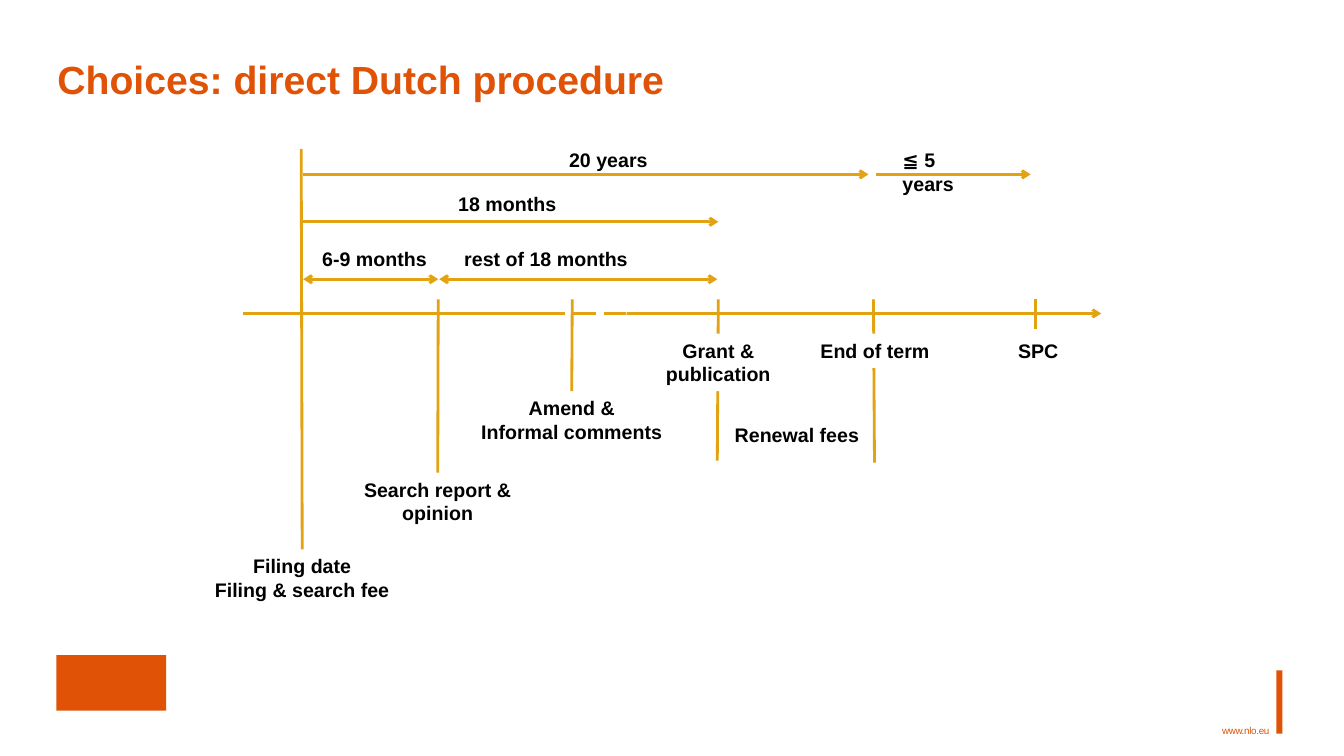
from dataclasses import dataclass

from lxml.etree import SubElement
from pptx import Presentation
from pptx.dml.color import RGBColor
from pptx.enum.dml import MSO_LINE
from pptx.enum.shapes import MSO_CONNECTOR, MSO_SHAPE
from pptx.enum.text import MSO_ANCHOR, PP_ALIGN
from pptx.oxml.ns import qn
from pptx.util import Inches, Pt


@dataclass(frozen=True)
class Theme:
    """Colours and type sizes of the slide."""
    brand: RGBColor = RGBColor(0xE0, 0x52, 0x06)
    line: RGBColor = RGBColor(0xE3, 0xA2, 0x12)
    text: RGBColor = RGBColor(0, 0, 0)
    paper: RGBColor = RGBColor(0xFF, 0xFF, 0xFF)
    font: str = "Arial"
    title_size: int = 28
    label_size: int = 14
    footer_size: int = 7
    line_width: int = 2


THEME = Theme()
AXIS_Y = 3.11
TICK_TOP = 2.97
TERM_Y = 1.73
PERIOD_Y = 2.77
FILING_X, SEARCH_X, AMEND_X, GRANT_X, END_X, SPC_X = 3, 4.35, 5.68, 7.13, 8.67, 10.28

ARROWS = [
    (3.01, 8.62, TERM_Y, False),
    (8.7, 10.23, TERM_Y, False),
    (2.99, GRANT_X, 2.2, False),
    (3.01, SEARCH_X, PERIOD_Y, True),
    (4.36, 7.12, PERIOD_Y, True),
]
TICKS = [(GRANT_X, 7.12, 4.57), (END_X, 8.68, 4.59), (SPC_X, SPC_X, 3.26)]
PERIODS = [
    ("6-9 months", 3.1, 2.4, 1.25),
    ("rest of 18 months", 4.51, 2.4, 1.84),
    ("18 months", 4.45, 1.85, 1.18),
    ("20 years", 5.55, 1.42, 0.99),
]
EVENTS = [
    (["Grant &", "publication"], 6.51, 3.31, 1.24),
    (["End of term"], 8.04, 3.31, 1.29),
    (["SPC"], 10, 3.31, 0.61),
    (["Renewal fees"], 7.19, 4.15, 1.44),
]
JOINED_EVENTS = [
    (["Filing date", "Filing & search fee"], 2.03, 5.45, 1.94, 2.99, 1.48),
    (["Search report &", "opinion"], 3.51, 4.69, 1.67, SEARCH_X, TICK_TOP),
    (["Amend &", "Informal comments"], 4.67, 3.88, 2.01, AMEND_X, TICK_TOP),
]


def add_run(paragraph, text, size, color, bold=True):
    """Add one formatted run and return it."""
    run = paragraph.add_run()
    run.text = text
    run.font.name = THEME.font
    run.font.size = Pt(size)
    run.font.bold = bold
    run.font.color.rgb = color
    return run


def add_block(slide, left, top, width, height, color):
    """Add a plain filled rectangle."""
    block = slide.shapes.add_shape(MSO_SHAPE.RECTANGLE, Inches(left), Inches(top),
                                   Inches(width), Inches(height))
    block.shadow.inherit = False
    block.fill.solid()
    block.fill.fore_color.rgb = color
    block.line.fill.background()


def add_label(slide, lines, left, top, width, wrap=False):
    """Add a bold label with one paragraph per line."""
    height = 0.34 if len(lines) == 1 else 0.57
    label = slide.shapes.add_textbox(Inches(left), Inches(top), Inches(width), Inches(height))
    frame = label.text_frame
    frame.word_wrap = wrap
    for index, line in enumerate(lines):
        paragraph = frame.add_paragraph() if index else frame.paragraphs[0]
        add_run(paragraph, line, THEME.label_size, THEME.text)
    return label


def add_event(slide, lines, left, top, width):
    """Add a centred label on a paper-coloured ground."""
    label = add_label(slide, lines, left, top, width)
    label.fill.solid()
    label.fill.fore_color.rgb = THEME.paper
    for paragraph in label.text_frame.paragraphs:
        paragraph.alignment = PP_ALIGN.CENTER
    return label


def add_line(slide, start, end, arrowheads=()):
    """Add a straight line with arrowheads at the named ends."""
    points = [Inches(value) for value in (*start, *end)]
    connector = slide.shapes.add_connector(MSO_CONNECTOR.STRAIGHT, *points)
    connector.line.color.rgb = THEME.line
    connector.line.width = Pt(THEME.line_width)
    outline = connector.line._get_or_add_ln()
    for name in arrowheads:
        SubElement(outline, qn(f"a:{name}"), type="arrow")
    SubElement(connector._element.spPr, qn("a:effectLst"))
    return connector


def add_title(slide, text):
    """Place and fill the title placeholder."""
    title = slide.shapes.title
    title.left, title.top, title.width, title.height = map(Inches, (0.57, 0.52, 12.2, 0.58))
    frame = title.text_frame
    frame.margin_left = frame.margin_right = frame.margin_top = frame.margin_bottom = 0
    frame.vertical_anchor = MSO_ANCHOR.MIDDLE
    paragraph = frame.paragraphs[0]
    paragraph.alignment = PP_ALIGN.LEFT
    paragraph.line_spacing = 0.9
    add_run(paragraph, text, THEME.title_size, THEME.brand)


def add_footer(slide):
    """Add the web address and the accent bar."""
    footer = slide.shapes.add_textbox(Inches(12.13), Inches(7.2), Inches(0.53), Inches(0.17))
    frame = footer.text_frame
    frame.margin_left = frame.margin_right = frame.margin_top = frame.margin_bottom = 0
    frame.word_wrap = False
    paragraph = frame.paragraphs[0]
    paragraph.line_spacing = 0.9
    run = add_run(paragraph, "www.nlo.eu", THEME.footer_size, THEME.brand, bold=False)
    run.font._element.set("spc", "-20")
    add_block(slide, 12.67, 6.65, 0.06, 0.63, THEME.brand)


def add_axis(slide):
    """Add the time axis with its dashed break."""
    add_line(slide, (2.41, AXIS_Y), (10.93, AXIS_Y), ["tailEnd"])
    add_block(slide, 5.39, 2.95, 0.83, 0.32, THEME.paper)
    gap = add_line(slide, (5.38, AXIS_Y), (6.21, AXIS_Y))
    gap.line.dash_style = MSO_LINE.LONG_DASH


def add_timeline(slide):
    """Add the axis, period arrows, ticks and labels."""
    add_axis(slide)
    for start, end, y, both in ARROWS:
        add_line(slide, (start, y), (end, y), ["headEnd", "tailEnd"] if both else ["tailEnd"])
    for top_x, bottom_x, bottom in TICKS:
        add_line(slide, (top_x, TICK_TOP), (bottom_x, bottom))
    for text, left, top, width in PERIODS:
        add_label(slide, [text], left, top, width)
    add_label(slide, ["≦ 5 years"], 8.86, 1.42, 1.07, wrap=True)
    for event in EVENTS:
        add_event(slide, *event)
    for lines, left, top, width, tick_x, tick_top in JOINED_EVENTS:
        label = add_event(slide, lines, left, top, width)
        tick = add_line(slide, (tick_x, tick_top), (left + width / 2, top))
        tick.end_connect(label, 0)


def main():
    """Build and save the presentation."""
    presentation = Presentation()
    presentation.slide_width = Inches(13.34)
    presentation.slide_height = Inches(7.5)
    slide = presentation.slides.add_slide(presentation.slide_layouts[5])
    add_title(slide, "Choices: direct Dutch procedure")
    add_footer(slide)
    add_block(slide, 0.56, 6.5, 1.09, 0.55, THEME.brand)
    add_timeline(slide)
    presentation.save("out.pptx")


if __name__ == "__main__":
    main()
